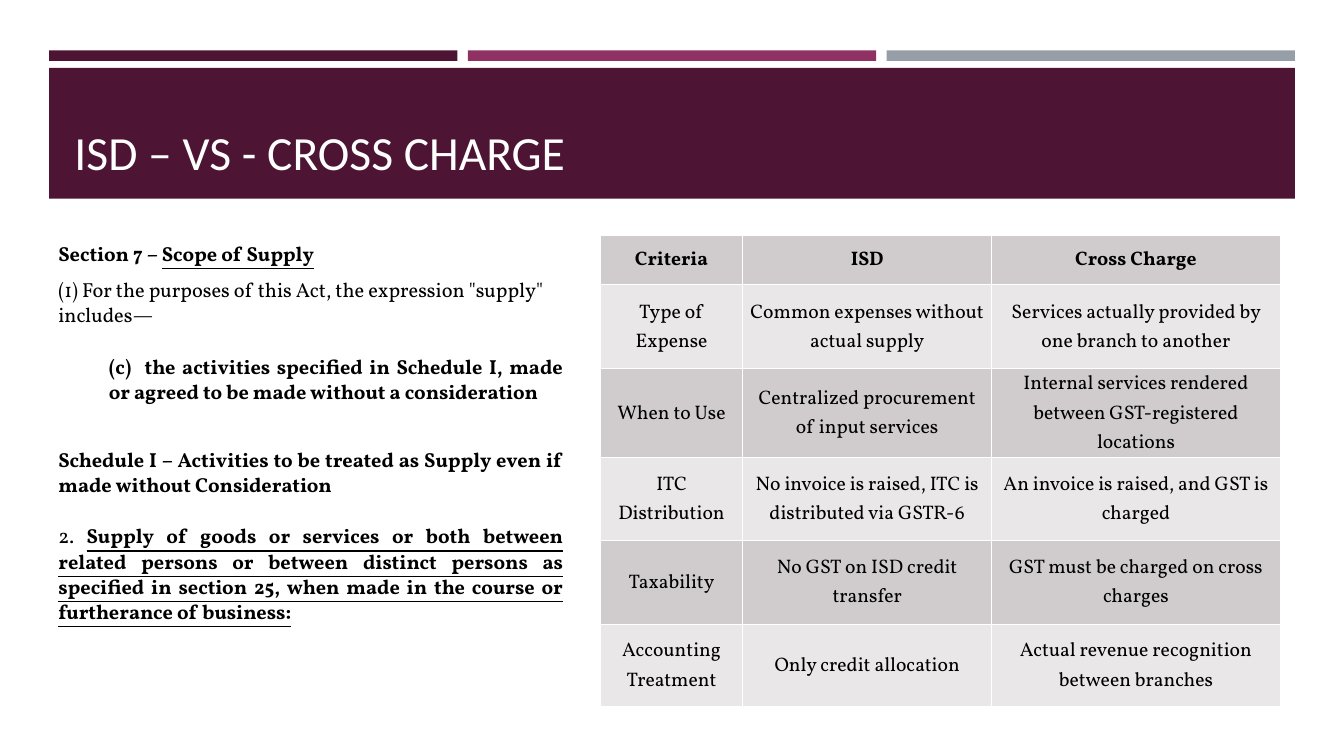
from dataclasses import dataclass

from lxml import etree
from pptx import Presentation
from pptx.dml.color import RGBColor
from pptx.enum.shapes import MSO_SHAPE
from pptx.enum.text import MSO_ANCHOR, MSO_AUTO_SIZE, PP_ALIGN
from pptx.oxml.ns import qn
from pptx.util import Pt

RECT = MSO_SHAPE.RECTANGLE
LEFT, CENTER, JUSTIFY = PP_ALIGN.LEFT, PP_ALIGN.CENTER, PP_ALIGN.JUSTIFY
MIDDLE, BOTTOM = MSO_ANCHOR.MIDDLE, MSO_ANCHOR.BOTTOM
NO_AUTOFIT = MSO_AUTO_SIZE.NONE


@dataclass(frozen=True)
class Theme:
    plum: str = "4D1434"
    berry: str = "903163"
    slate: str = "969FA7"
    white: str = "FFFFFF"
    black: str = "000000"
    dark_band: str = "D0CCCE"
    light_band: str = "E9E7E8"
    title_font: str = "Calibri"
    text_font: str = "Vollkorn"
    title_size: float = 34
    body_size: float = 14.5
    table_size: float = 14


T = Theme()

PROVISIONS = [
    (LEFT, 0, 7.5, [("Section 7 – ", True, False), ("Scope of Supply", True, True)]),
    (LEFT, 0, 19, [('(1) For the purposes of this Act, the expression "supply" includes—',
                    False, False)]),
    (JUSTIFY, 36, 30, [("(c)  the activities specified in Schedule I, made or agreed to be "
                        "made without a consideration", True, False)]),
    (JUSTIFY, 0, 18.5, [("Schedule I – Activities to be treated as Supply even if made "
                         "without Consideration", True, False)]),
    (JUSTIFY, 0, 0, [("2. ", False, False),
                     ("Supply of goods or services or both between related persons or "
                      "between distinct persons as specified in section 25, when made in "
                      "the course or furtherance of business:", True, True)]),
]
COLUMNS = [101.5, 178, 206]
ROWS = [
    (35.5, "Criteria", "ISD", "Cross Charge"),
    (60, "Type of Expense", "Common expenses without actual supply",
     "Services actually provided by one branch to another"),
    (63.5, "When to Use", "Centralized procurement of input services",
     "Internal services rendered between GST-registered locations"),
    (59, "ITC Distribution", "No invoice is raised, ITC is distributed via GSTR-6",
     "An invoice is raised, and GST is charged"),
    (60, "Taxability", "No GST on ISD credit transfer",
     "GST must be charged on cross charges"),
    (59, "Accounting Treatment", "Only credit allocation",
     "Actual revenue recognition between branches"),
]


def rgb(color):
    return RGBColor.from_string(color)


def set_font(font, name, size, color):
    font.name, font.size = name, Pt(size)
    font.color.rgb = rgb(color)


def place(sp, x, y, w, h):
    sp.left, sp.top, sp.width, sp.height = Pt(x), Pt(y), Pt(w), Pt(h)


def add_bar(s, x, y, w, h, color):
    sp = s.shapes.add_shape(RECT, Pt(x), Pt(y), Pt(w), Pt(h))
    sp.shadow.inherit = False
    sp.fill.solid()
    sp.fill.fore_color.rgb = rgb(color)
    sp.line.fill.background()


def add_header(s, x, y, w, h):
    gap = 7.5
    stripe = (w - 2 * gap) / 3
    for i, color in enumerate((T.plum, T.berry, T.slate)):
        add_bar(s, x + i * (stripe + gap), y, stripe, 7.5, color)
    add_bar(s, x, y + 12.5, w, h - 12.5, T.plum)

    title = s.shapes.title
    title.element.getparent().append(title.element)
    place(title, x + 11, y + 16, w - 22, 80)
    tf = title.text_frame
    tf.auto_size, tf.vertical_anchor = NO_AUTOFIT, BOTTOM
    tf.text = "ISD – VS - CROSS CHARGE"
    p = tf.paragraphs[0]
    p.alignment = LEFT
    set_font(p.font, T.title_font, T.title_size, T.white)


def add_provisions(s, x, y, w, h):
    body = s.placeholders[1]
    place(body, x, y, w, h)
    tf = body.text_frame
    tf.auto_size = NO_AUTOFIT
    for i, (align, indent, after, runs) in enumerate(PROVISIONS):
        p = tf.add_paragraph() if i else tf.paragraphs[0]
        p.alignment, p.line_spacing = align, 1.04
        p.space_before, p.space_after = Pt(0), Pt(after)
        set_font(p.font, T.text_font, T.body_size, T.black)
        pPr = p._p.get_or_add_pPr()
        pPr.set("marL", str(Pt(indent)))
        pPr.set("indent", "0")
        pPr.insert_element_before(pPr.makeelement(qn("a:buNone")),
                                  "a:tabLst", "a:defRPr", "a:extLst")
        for text, bold, underline in runs:
            r = p.add_run()
            r.text = text
            r.font.bold, r.font.underline = bold, underline


def set_borders(cell, color):
    tcPr = cell._tc.get_or_add_tcPr()
    for i, side in enumerate(("lnL", "lnR", "lnT", "lnB")):
        ln = etree.Element(qn(f"a:{side}"), w=str(Pt(1)))
        fill = etree.SubElement(ln, qn("a:solidFill"))
        etree.SubElement(fill, qn("a:srgbClr"), val=color)
        tcPr.insert(i, ln)


def fill_cell(cell, text, header, band):
    cell.fill.solid()
    cell.fill.fore_color.rgb = rgb(band)
    set_borders(cell, T.white)
    cell.vertical_anchor = MIDDLE
    cell.margin_left = cell.margin_right = Pt(5)
    cell.margin_top = cell.margin_bottom = Pt(0)
    cell.text = text
    p = cell.text_frame.paragraphs[0]
    p.alignment, p.line_spacing, p.space_after = CENTER, 1.07, Pt(8)
    set_font(p.font, T.text_font, T.table_size, T.black)
    p.font.bold = header


def add_comparison(s, x, y, w, h):
    table = s.shapes.add_table(len(ROWS), len(COLUMNS), Pt(x), Pt(y), Pt(w), Pt(h)).table
    for column, width in zip(table.columns, COLUMNS):
        column.width = Pt(width)
    for i, (height, *texts) in enumerate(ROWS):
        table.rows[i].height = Pt(height)
        band = T.light_band if i % 2 else T.dark_band
        for j, text in enumerate(texts):
            fill_cell(table.cell(i, j), text, i == 0, band)


def main():
    prs = Presentation()
    prs.slide_width, prs.slide_height = Pt(960), Pt(540)
    s = prs.slides.add_slide(prs.slide_layouts[1])
    add_header(s, 35, 36, 890, 106)
    add_provisions(s, 34.5, 168, 375, 340)
    add_comparison(s, 429, 168, sum(COLUMNS), sum(row[0] for row in ROWS))
    prs.save("out.pptx")


if __name__ == "__main__":
    main()
